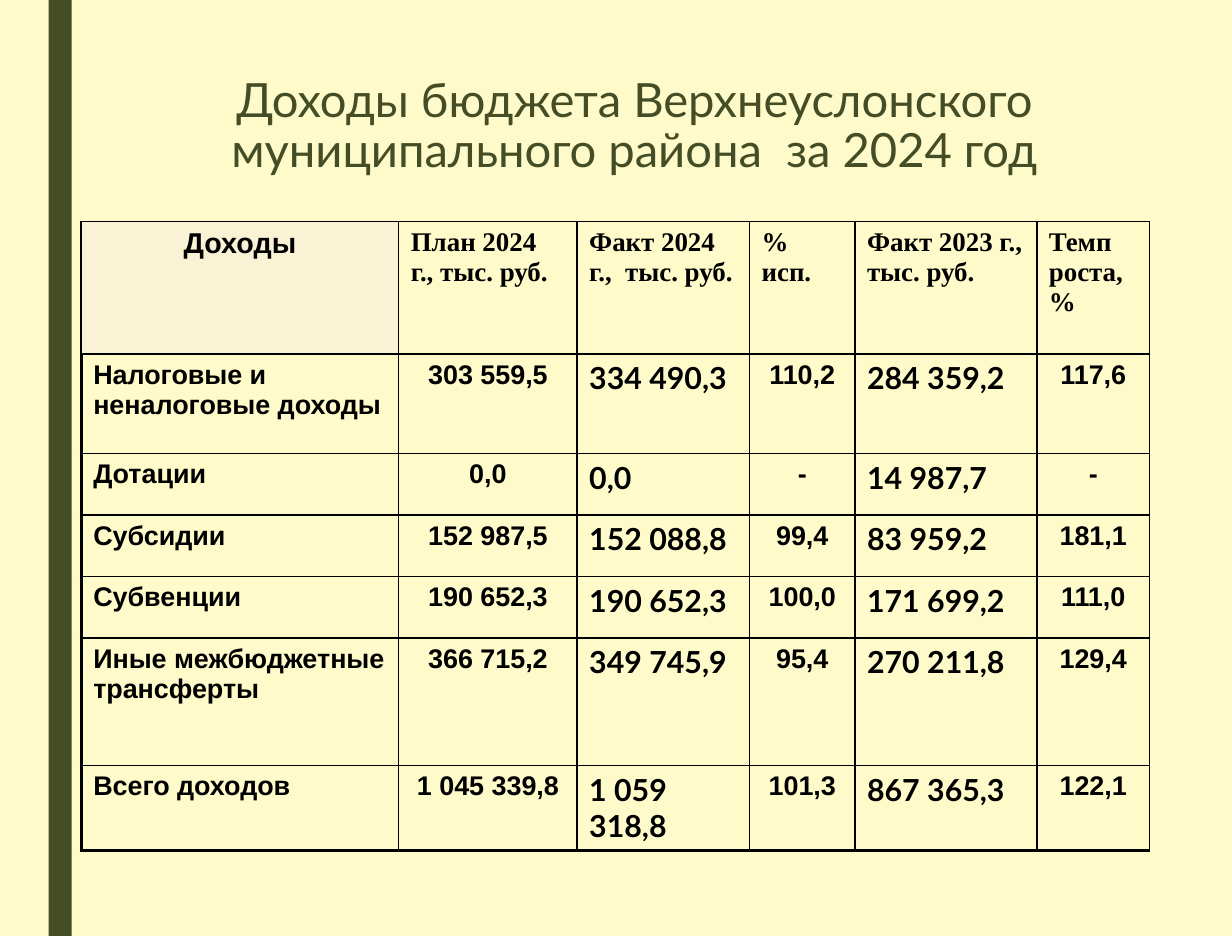
"""Build the slide with the district's budget revenues for 2024."""
from lxml.etree import SubElement
from pptx import Presentation
from pptx.dml.color import RGBColor
from pptx.enum.shapes import MSO_SHAPE
from pptx.enum.text import MSO_ANCHOR, PP_ALIGN
from pptx.oxml.ns import qn
from pptx.util import Pt

COLORS = {"background": "FEFAC9", "olive": "444D26", "header": "FAF2D4", "black": "000000"}
COL_WIDTHS = [188.6, 105.9, 102.4, 62.6, 108, 67]
ROW_HEIGHTS = [78.5, 59.2, 36.5, 36.5, 36.5, 75.8, 48.2]
ROWS = [
    ["Доходы", "План 2024 г., тыс. руб.", "Факт 2024 г.,  тыс. руб.", "% исп.",
     "Факт 2023 г., тыс. руб.", "Темп роста, %"],
    ["Налоговые и неналоговые доходы", "303 559,5", "334 490,3", "110,2", "284 359,2", "117,6"],
    ["Дотации", "0,0", "0,0", "-", "14 987,7", "-"],
    ["Субсидии", "152 987,5", "152 088,8", "99,4", "83 959,2", "181,1"],
    ["Субвенции", "190 652,3", "190 652,3", "100,0", "171 699,2", "111,0"],
    ["Иные межбюджетные трансферты", "366 715,2", "349 745,9", "95,4", "270 211,8", "129,4"],
    ["Всего доходов", "1 045 339,8", "1 059 318,8", "101,3", "867 365,3", "122,1"],
]
FACT_COLUMNS = (2, 4)
THIN, THICK = 1, 2.25


def color(name):
    return RGBColor.from_string(COLORS[name])


def format_text(tf, font, size, color_name, align, bold=False):
    p = tf.paragraphs[0]
    p.alignment = align
    for r in p.runs:
        r.font.name = font
        r.font.size = Pt(size)
        r.font.bold = bold
        r.font.color.rgb = color(color_name)


def add_stripe(s, height):
    stripe = s.shapes.add_shape(MSO_SHAPE.RECTANGLE, Pt(28.8), Pt(0), Pt(13.7), height)
    stripe.shadow.inherit = False
    stripe.fill.solid()
    stripe.fill.fore_color.rgb = color("olive")
    stripe.line.fill.background()


def set_title(s, text):
    title = s.shapes.title
    title.left, title.top, title.width, title.height = Pt(59.8), Pt(41.8), Pt(633.6), Pt(67.7)
    tf = title.text_frame
    tf.text = text
    tf.word_wrap = True
    tf.vertical_anchor = MSO_ANCHOR.MIDDLE
    tf.paragraphs[0].line_spacing = 0.89
    format_text(tf, "Lato", 28, "olive", PP_ALIGN.CENTER)


def set_borders(cell, left, bottom):
    tcPr = cell._tc.get_or_add_tcPr()
    widths = {"a:lnL": left, "a:lnR": THIN, "a:lnT": THIN, "a:lnB": bottom}
    for tag, width in widths.items():
        ln = SubElement(tcPr, qn(tag), w=str(Pt(width)))
        fill = SubElement(ln, qn("a:solidFill"))
        SubElement(fill, qn("a:srgbClr"), val=COLORS["black"])


def cell_style(row, col):
    if row == 0:
        return ("Times New Roman", 16, PP_ALIGN.LEFT) if col else ("Arial", 17, PP_ALIGN.CENTER)
    if col in FACT_COLUMNS:
        return "Lato", 18, PP_ALIGN.LEFT
    return "Arial", 16, PP_ALIGN.CENTER if col else PP_ALIGN.LEFT


def fill_cell(cell, row, col):
    cell.text_frame.text = ROWS[row][col]
    font, size, align = cell_style(row, col)
    format_text(cell.text_frame, font, size, "black", align, bold=True)
    cell.margin_left = cell.margin_right = Pt(7.2)
    cell.margin_top = cell.margin_bottom = Pt(3.6)
    set_borders(cell, THICK if row and col == 0 else THIN,
                THICK if row == len(ROWS) - 1 else THIN)
    if row == col == 0:
        cell.fill.solid()
        cell.fill.fore_color.rgb = color("header")
    else:
        cell.fill.background()


def add_revenue_table(s):
    frame = s.shapes.add_table(len(ROWS), len(COL_WIDTHS), Pt(48.2), Pt(131.6),
                               Pt(sum(COL_WIDTHS)), Pt(sum(ROW_HEIGHTS)))
    table = frame.table
    table.first_row = table.horz_banding = False
    for column, width in zip(table.columns, COL_WIDTHS):
        column.width = Pt(width)
    for row, height in enumerate(ROW_HEIGHTS):
        table.rows[row].height = Pt(height)
        for col in range(len(COL_WIDTHS)):
            fill_cell(table.cell(row, col), row, col)


def main():
    prs = Presentation()
    prs.slide_width, prs.slide_height = Pt(731.5), Pt(555.8)
    s = prs.slides.add_slide(prs.slide_layouts[5])
    s.background.fill.solid()
    s.background.fill.fore_color.rgb = color("background")
    add_stripe(s, prs.slide_height)
    set_title(s, "Доходы бюджета Верхнеуслонского муниципального района  за 2024 год")
    add_revenue_table(s)
    prs.save("out.pptx")


if __name__ == "__main__":
    main()
